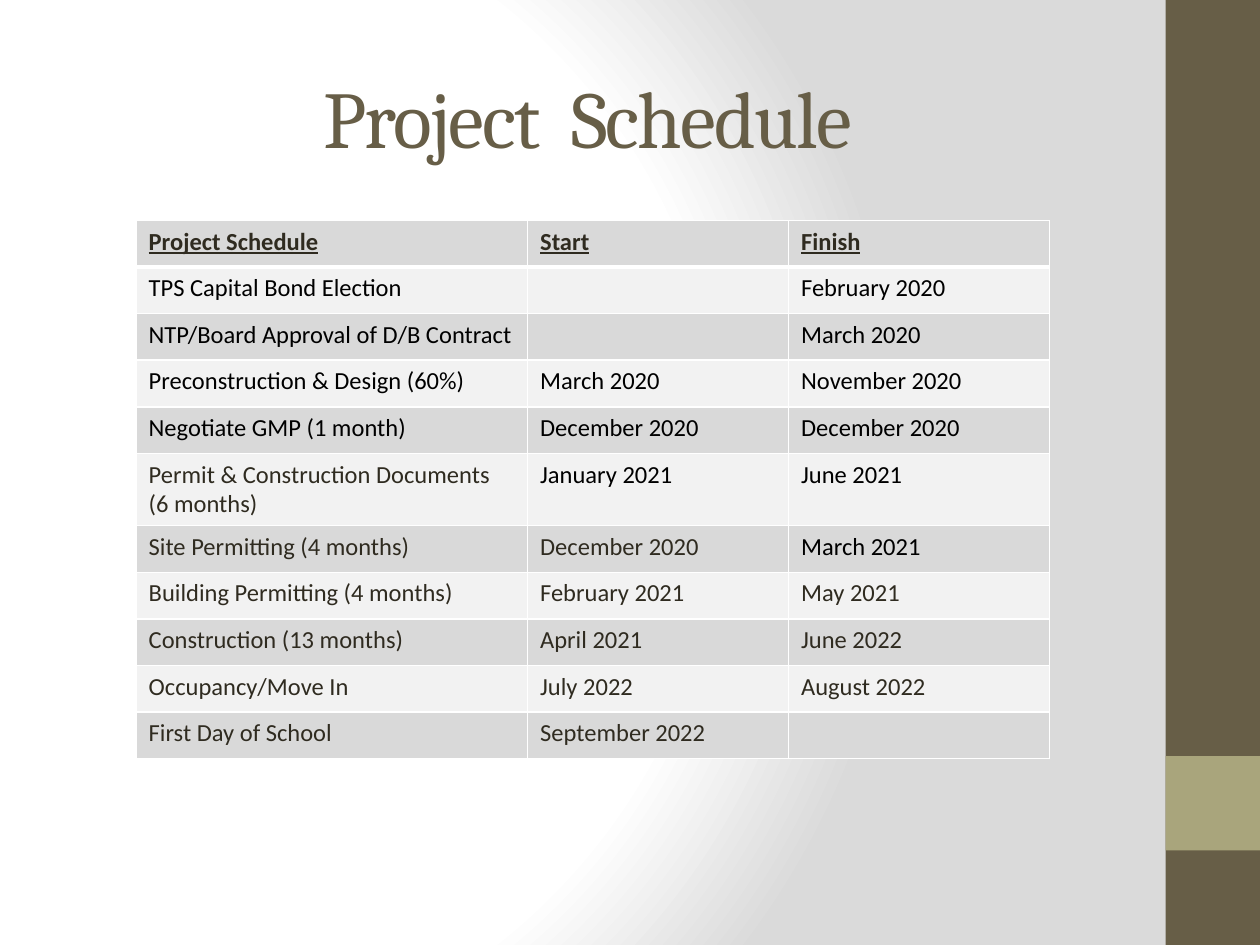
from pptx import Presentation
from pptx.dml.color import RGBColor
from pptx.enum.shapes import MSO_SHAPE
from pptx.enum.text import MSO_ANCHOR, PP_ALIGN
from pptx.oxml import parse_xml
from pptx.oxml.ns import nsdecls
from pptx.util import Inches, Pt

RECT = MSO_SHAPE.RECTANGLE
MIDDLE = MSO_ANCHOR.MIDDLE
CENTER, LEFT = PP_ALIGN.CENTER, PP_ALIGN.LEFT

BROWN = RGBColor(0x67, 0x5E, 0x47)
OLIVE = RGBColor(0xA9, 0xA5, 0x7C)
INK = RGBColor(0x2F, 0x2B, 0x20)
BLACK = RGBColor(0, 0, 0)
WHITE = RGBColor(0xFF, 0xFF, 0xFF)
MIST = RGBColor(0xDA, 0xDA, 0xDA)
BANDS = (RGBColor(0xD9, 0xD9, 0xD9), RGBColor(0xF2, 0xF2, 0xF2))

# Content
TITLE = "Project  Schedule"
HEAD = ("Project Schedule", "Start", "Finish")
# Task, start, finish, and the first column set in black
TASKS = [
    ("TPS Capital Bond Election", "", "February 2020", 0),
    ("NTP/Board Approval of D/B Contract", "", "March 2020", 0),
    ("Preconstruction & Design (60%)", "March 2020", "November 2020", 0),
    ("Negotiate GMP (1 month)", "December 2020", "December 2020", 0),
    ("Permit & Construction Documents (6 months)", "January 2021", "June 2021", 1),
    ("Site Permitting (4 months)", "December 2020", "March 2021", 2),
    ("Building Permitting (4 months)", "February 2021", "May 2021", 3),
    ("Construction (13 months)", "April 2021", "June 2022", 3),
    ("Occupancy/Move In", "July 2022", "August 2022", 3),
    ("First Day of School", "September 2022", "", 3),
]

# Layout, in inches
WIDTH, HEIGHT = 10, 7.5
BAR = 0.75
TABLE_LEFT, TABLE_TOP, TABLE_WIDTH = 1.08, 1.75, 7.25
ROW = 0.37
SHARES = (3, 2, 2)
STOPS = ((0, WHITE), (75, WHITE), (100, MIST))


def put(frame, text, font="Calibri", size=14, color=INK, bold=False,
        line=False, align=LEFT, track=0):
    """Write one formatted paragraph into a text frame."""
    para = frame.paragraphs[0]
    para.alignment = align
    if not text:
        para._p.get_or_add_endParaRPr().set("sz", str(size * 100))
        return
    run = para.add_run()
    run.text = text
    face = run.font
    face.name, face.size, face.bold, face.underline = font, Pt(size), bold, line
    face.color.rgb = color
    if track:
        run._r.get_or_add_rPr().set("spc", str(track * 100))


def edge(cell, top=1, base=1):
    """Draw white borders, with widths in points."""
    sides = (("L", 1), ("R", 1), ("T", top), ("B", base))
    for spot, (side, width) in enumerate(sides):
        cell._tc.get_or_add_tcPr().insert(spot, parse_xml(
            f'<a:ln{side} {nsdecls("a")} w="{Pt(width)}"><a:solidFill>'
            f'<a:srgbClr val="{WHITE}"/></a:solidFill></a:ln{side}>'))


def bar(slide, top, height, color):
    shape = slide.shapes.add_shape(
        RECT, Inches(WIDTH - BAR), Inches(top), Inches(BAR), Inches(height))
    shape.shadow.inherit = False
    shape.fill.solid()
    shape.fill.fore_color.rgb = color
    shape.line.fill.background()


def backdrop(slide):
    stops = "".join(f'<a:gs pos="{at * 1000}"><a:srgbClr val="{color}"/></a:gs>'
                    for at, color in STOPS)
    slide._element.cSld.insert(0, parse_xml(
        f'<p:bg {nsdecls("p", "a")}><p:bgPr><a:gradFill rotWithShape="1">'
        f'<a:gsLst>{stops}</a:gsLst><a:path path="circle">'
        '<a:fillToRect l="20000" t="50000" r="100000" b="50000"/></a:path>'
        '</a:gradFill><a:effectLst/></p:bgPr></p:bg>'))


def schedule(slide):
    count = len(TASKS) + 1
    table = slide.shapes.add_table(
        count, len(HEAD), Inches(TABLE_LEFT), Inches(TABLE_TOP),
        Inches(TABLE_WIDTH), Inches(ROW * count)).table
    for col, share in zip(table.columns, SHARES):
        col.width = Inches(TABLE_WIDTH * share / sum(SHARES))
    for r, (*texts, dark) in enumerate([(*HEAD, len(HEAD)), *TASKS]):
        table.rows[r].height = Inches(ROW)
        for c, text in enumerate(texts):
            cell = table.cell(r, c)
            cell.fill.solid()
            cell.fill.fore_color.rgb = BANDS[r % 2]
            edge(cell, top=3 if r == 1 else 1, base=3 if r == 0 else 1)
            put(cell.text_frame, text, color=BLACK if c >= dark else INK,
                bold=r == 0, line=r == 0)


def main():
    deck = Presentation()
    deck.slide_width, deck.slide_height = Inches(WIDTH), Inches(HEIGHT)
    slide = deck.slides.add_slide(deck.slide_layouts[5])
    backdrop(slide)

    # Side bars
    bar(slide, 0, HEIGHT, BROWN)
    bar(slide, HEIGHT - 2 * BAR, BAR, OLIVE)

    # Title
    title = slide.shapes.title
    title.left, title.top = Inches(0.5), Inches(0.3)
    title.width, title.height = Inches(8.33), Inches(1.25)
    title.text_frame.vertical_anchor = MIDDLE
    put(title.text_frame, TITLE, font="Cambria", size=46, color=BROWN,
        align=CENTER, track=-1)

    schedule(slide)
    deck.save("out.pptx")


if __name__ == "__main__":
    main()
